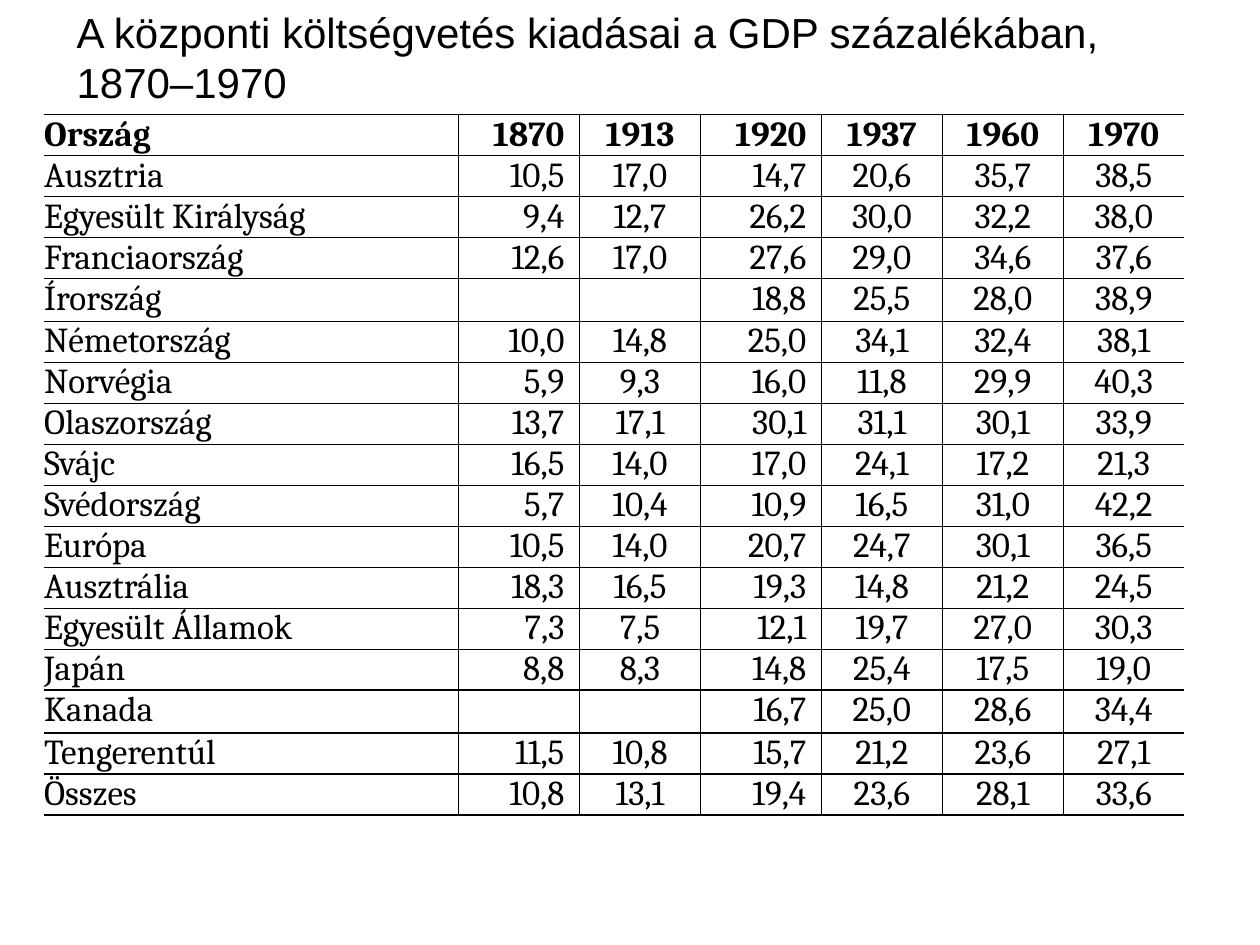
from lxml.etree import SubElement
from pptx import Presentation
from pptx.dml.color import RGBColor
from pptx.enum.text import PP_ALIGN as Align
from pptx.oxml.ns import qn
from pptx.util import Inches, Pt

BLACK = RGBColor(0, 0, 0)

TITLE = "A központi költségvetés kiadásai a GDP százalékában, 1870–1970"
ROWS = [
    ("Ország", "1870", "1913", "1920", "1937", "1960", "1970"),
    ("Ausztria", "10,5", "17,0", "14,7", "20,6", "35,7", "38,5"),
    ("Egyesült Királyság", "9,4", "12,7", "26,2", "30,0", "32,2", "38,0"),
    ("Franciaország", "12,6", "17,0", "27,6", "29,0", "34,6", "37,6"),
    ("Írország", "", "", "18,8", "25,5", "28,0", "38,9"),
    ("Németország", "10,0", "14,8", "25,0", "34,1", "32,4", "38,1"),
    ("Norvégia", "5,9", "9,3", "16,0", "11,8", "29,9", "40,3"),
    ("Olaszország", "13,7", "17,1", "30,1", "31,1", "30,1", "33,9"),
    ("Svájc", "16,5", "14,0", "17,0", "24,1", "17,2", "21,3"),
    ("Svédország", "5,7", "10,4", "10,9", "16,5", "31,0", "42,2"),
    ("Európa", "10,5", "14,0", "20,7", "24,7", "30,1", "36,5"),
    ("Ausztrália", "18,3", "16,5", "19,3", "14,8", "21,2", "24,5"),
    ("Egyesült Államok", "7,3", "7,5", "12,1", "19,7", "27,0", "30,3"),
    ("Japán", "8,8", "8,3", "14,8", "25,4", "17,5", "19,0"),
    ("Kanada", "", "", "16,7", "25,0", "28,6", "34,4"),
    ("Tengerentúl", "11,5", "10,8", "15,7", "21,2", "23,6", "27,1"),
    ("Összes", "10,8", "13,1", "19,4", "23,6", "28,1", "33,6"),
]
ALIGNS = [Align.LEFT, Align.RIGHT, Align.CENTER, Align.RIGHT] + [Align.CENTER] * 3
WIDTHS = [3.29] + [0.96] * 6
TABLE_HEIGHT = 5.53
INDENT = Inches(0.12)


def write(frame, text, font, size, bold=False, align=Align.LEFT, left=0, right=0):
    para = frame.paragraphs[0]
    para.alignment = align
    props = para._p.get_or_add_pPr()
    props.set("marL", str(left))
    props.set("marR", str(right))
    para.font.size = Pt(size)
    if text:
        span = para.add_run()
        span.text = text
        span.font.name = font
        span.font.size = Pt(size)
        span.font.bold = bold
        span.font.color.rgb = BLACK


def add_borders(cell, sides):
    props = cell._tc.get_or_add_tcPr()
    for side in "LRTB":
        line = SubElement(props, qn(f"a:ln{side}"), w=str(Pt(1)))
        if side in sides:
            fill = SubElement(line, qn("a:solidFill"))
            SubElement(fill, qn("a:srgbClr"), val=str(BLACK))
        else:
            SubElement(line, qn("a:noFill"))


deck = Presentation()
deck.slide_width, deck.slide_height = Inches(10), Inches(7.5)
page = deck.slides.add_slide(deck.slide_layouts[6])

table = page.shapes.add_table(
    len(ROWS), len(WIDTHS), Inches(0.35), Inches(0.91),
    Inches(sum(WIDTHS)), Inches(TABLE_HEIGHT),
).table
table.first_row = table.horz_banding = False
for column, width in zip(table.columns, WIDTHS):
    column.width = Inches(width)

last = len(WIDTHS) - 1
for r, values in enumerate(ROWS):
    for c, (value, align) in enumerate(zip(values, ALIGNS)):
        cell = table.cell(r, c)
        cell.margin_left = cell.margin_right = cell.margin_top = cell.margin_bottom = 0
        add_borders(cell, "TB" + ("L" if c > 0 else "") + ("R" if c < last else ""))
        cell.fill.background()
        write(cell.text_frame, value, "Cambria", 20, bold=r == 0, align=align,
              left=INDENT if align == Align.CENTER else 0,
              right=0 if align == Align.LEFT else INDENT)

box = page.shapes.add_textbox(Inches(0.51), 0, Inches(8.9), Inches(0.91))
box.text_frame.word_wrap = True
write(box.text_frame, TITLE, "Arial", 24)

deck.save("out.pptx")
